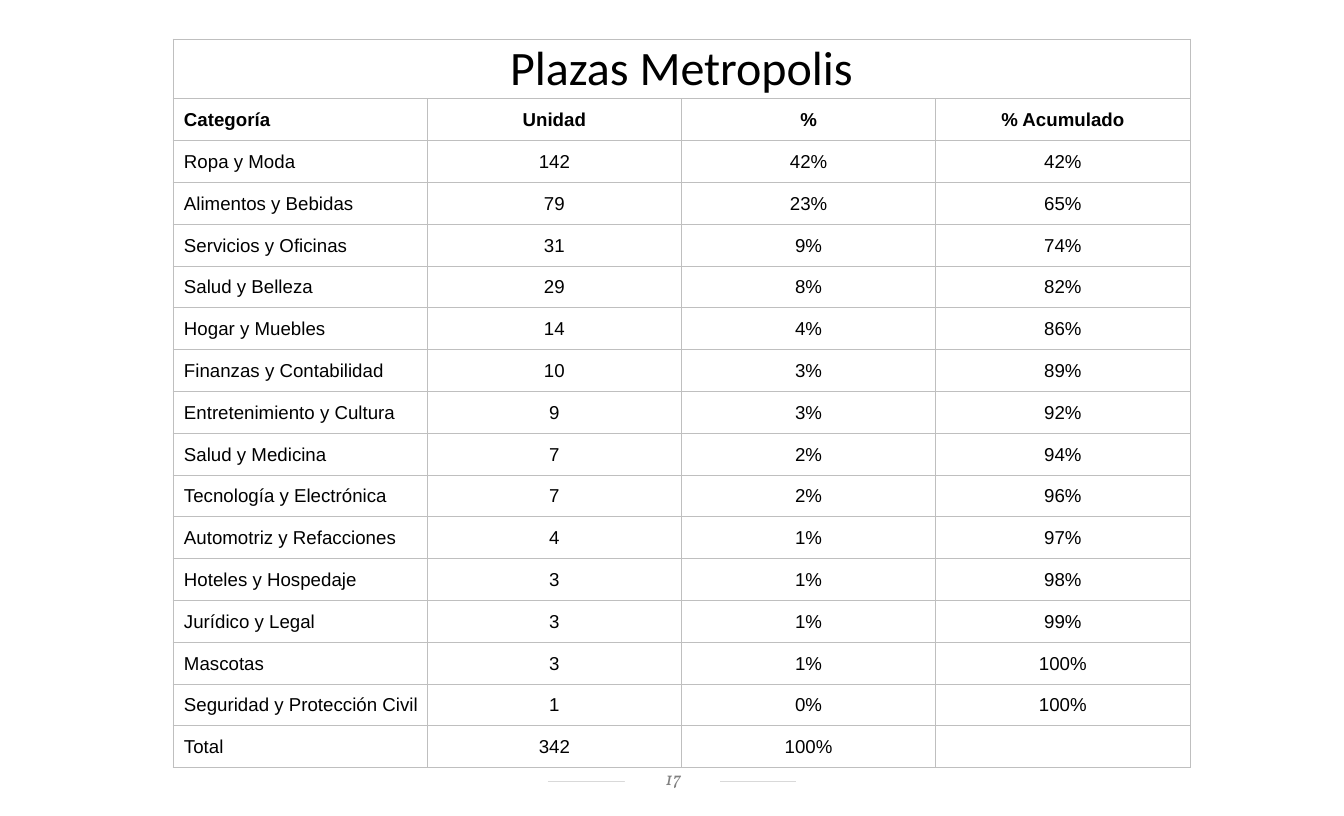
from dataclasses import dataclass

from lxml import etree
from pptx import Presentation
from pptx.dml.color import RGBColor
from pptx.enum.shapes import MSO_CONNECTOR, MSO_SHAPE
from pptx.enum.text import MSO_ANCHOR, PP_ALIGN
from pptx.oxml.ns import qn
from pptx.slide import Slide
from pptx.table import _Cell
from pptx.text.text import TextFrame
from pptx.util import Pt

LEFT, CENTER = PP_ALIGN.LEFT, PP_ALIGN.CENTER
MIDDLE = MSO_ANCHOR.MIDDLE
STRAIGHT, RECTANGLE = MSO_CONNECTOR.STRAIGHT, MSO_SHAPE.RECTANGLE

PX = 9525  # EMU per pixel
BLANK_LAYOUT = 6
PAGE_WIDTH, PAGE_HEIGHT = 1344, 816
TABLE_LEFT, TABLE_TOP, TABLE_WIDTH = 173, 39, 1017
TITLE_HEIGHT, BODY_HEIGHT = 59, 669


@dataclass(frozen=True)
class TextStyle:
    font: str
    size: int
    color: str
    bold: bool = False
    italic: bool = False


@dataclass(frozen=True)
class Theme:
    paper: str = "FFFFFF"
    grid: str = "BFBFBF"
    rule: str = "D9D9D9"
    line_width: float = 0.5
    title: TextStyle = TextStyle("Calibri", 36, "000000")
    header: TextStyle = TextStyle("Arial", 14, "000000", bold=True)
    body: TextStyle = TextStyle("Arial", 14, "000000")
    page_number: TextStyle = TextStyle("Vollkorn", 14, "808080", italic=True)


@dataclass(frozen=True)
class Category:
    name: str
    units: str
    share: str
    cumulative: str


THEME = Theme()
TITLE = "Plazas Metropolis"
HEADER = Category("Categoría", "Unidad", "%", "% Acumulado")
CATEGORIES = [
    Category("Ropa y Moda", "142", "42%", "42%"),
    Category("Alimentos y Bebidas", "79", "23%", "65%"),
    Category("Servicios y Oficinas", "31", "9%", "74%"),
    Category("Salud y Belleza", "29", "8%", "82%"),
    Category("Hogar y Muebles", "14", "4%", "86%"),
    Category("Finanzas y Contabilidad", "10", "3%", "89%"),
    Category("Entretenimiento y Cultura", "9", "3%", "92%"),
    Category("Salud y Medicina", "7", "2%", "94%"),
    Category("Tecnología y Electrónica", "7", "2%", "96%"),
    Category("Automotriz y Refacciones", "4", "1%", "97%"),
    Category("Hoteles y Hospedaje", "3", "1%", "98%"),
    Category("Jurídico y Legal", "3", "1%", "99%"),
    Category("Mascotas", "3", "1%", "100%"),
    Category("Seguridad y Protección Civil", "1", "0%", "100%"),
    Category("Total", "342", "100%", ""),
]


def write_text(frame: TextFrame, text: str, style: TextStyle, align: PP_ALIGN) -> None:
    para = frame.paragraphs[0]
    if text:
        para.add_run().text = text
    para.alignment = align
    font = para.font
    font.name, font.size = style.font, Pt(style.size)
    font.bold, font.italic = style.bold, style.italic
    font.color.rgb = RGBColor.from_string(style.color)


def add_borders(cell: _Cell) -> None:
    properties = cell._tc.get_or_add_tcPr()
    for side in ("a:lnL", "a:lnR", "a:lnT", "a:lnB"):
        line = etree.SubElement(properties, qn(side), w=str(Pt(THEME.line_width)))
        fill = etree.SubElement(line, qn("a:solidFill"))
        etree.SubElement(fill, qn("a:srgbClr"), val=THEME.grid)


def format_cell(cell: _Cell, text: str, style: TextStyle, align: PP_ALIGN) -> None:
    cell.margin_left = (11 if align == LEFT else 1) * PX
    cell.margin_right = cell.margin_top = PX
    cell.margin_bottom = 0
    cell.vertical_anchor = MIDDLE
    add_borders(cell)
    cell.fill.background()
    write_text(cell.text_frame, text, style, align)


def add_category_table(page: Slide) -> None:
    records = [HEADER, *CATEGORIES]
    rows = [(TITLE, "", "", "")]
    rows += [(item.name, item.units, item.share, item.cumulative) for item in records]
    column_count = len(rows[0])
    table = page.shapes.add_table(
        len(rows), column_count, TABLE_LEFT * PX, TABLE_TOP * PX,
        TABLE_WIDTH * PX, (TITLE_HEIGHT + BODY_HEIGHT) * PX,
    ).table
    table.first_row = table.horz_banding = False
    for column in table.columns:
        column.width = TABLE_WIDTH * PX // column_count

    for row_index, values in enumerate(rows):
        is_title = row_index == 0
        row_height = TITLE_HEIGHT * PX if is_title else BODY_HEIGHT * PX // len(records)
        table.rows[row_index].height = row_height
        style = {0: THEME.title, 1: THEME.header}.get(row_index, THEME.body)
        for column_index, value in enumerate(values):
            align = LEFT if column_index == 0 and not is_title else CENTER
            format_cell(table.cell(row_index, column_index), value, style, align)
    table.cell(0, 0).merge(table.cell(0, column_count - 1))


def add_page_number(page: Slide, number: str) -> None:
    # Thin rule, interrupted by the number box
    rule = page.shapes.add_connector(STRAIGHT, 548 * PX, 781 * PX, 796 * PX, 781 * PX)
    rule.line.color.rgb = RGBColor.from_string(THEME.rule)
    rule.line.width = Pt(THEME.line_width)
    etree.SubElement(rule._element.spPr, qn("a:effectLst"))

    box = page.shapes.add_shape(RECTANGLE, 625 * PX, 766 * PX, 95 * PX, 28 * PX)
    box.shadow.inherit = False
    box.fill.solid()
    box.fill.fore_color.rgb = RGBColor.from_string(THEME.paper)
    box.line.fill.background()
    frame = box.text_frame
    frame.margin_left, frame.margin_right = 12 * PX, 10 * PX
    frame.margin_top, frame.margin_bottom = 2 * PX, 5 * PX
    frame.vertical_anchor = MIDDLE
    write_text(frame, number, THEME.page_number, CENTER)


def main() -> None:
    deck = Presentation()
    deck.slide_width, deck.slide_height = PAGE_WIDTH * PX, PAGE_HEIGHT * PX
    page = deck.slides.add_slide(deck.slide_layouts[BLANK_LAYOUT])
    add_page_number(page, "17")
    add_category_table(page)
    deck.save("out.pptx")


if __name__ == "__main__":
    main()
